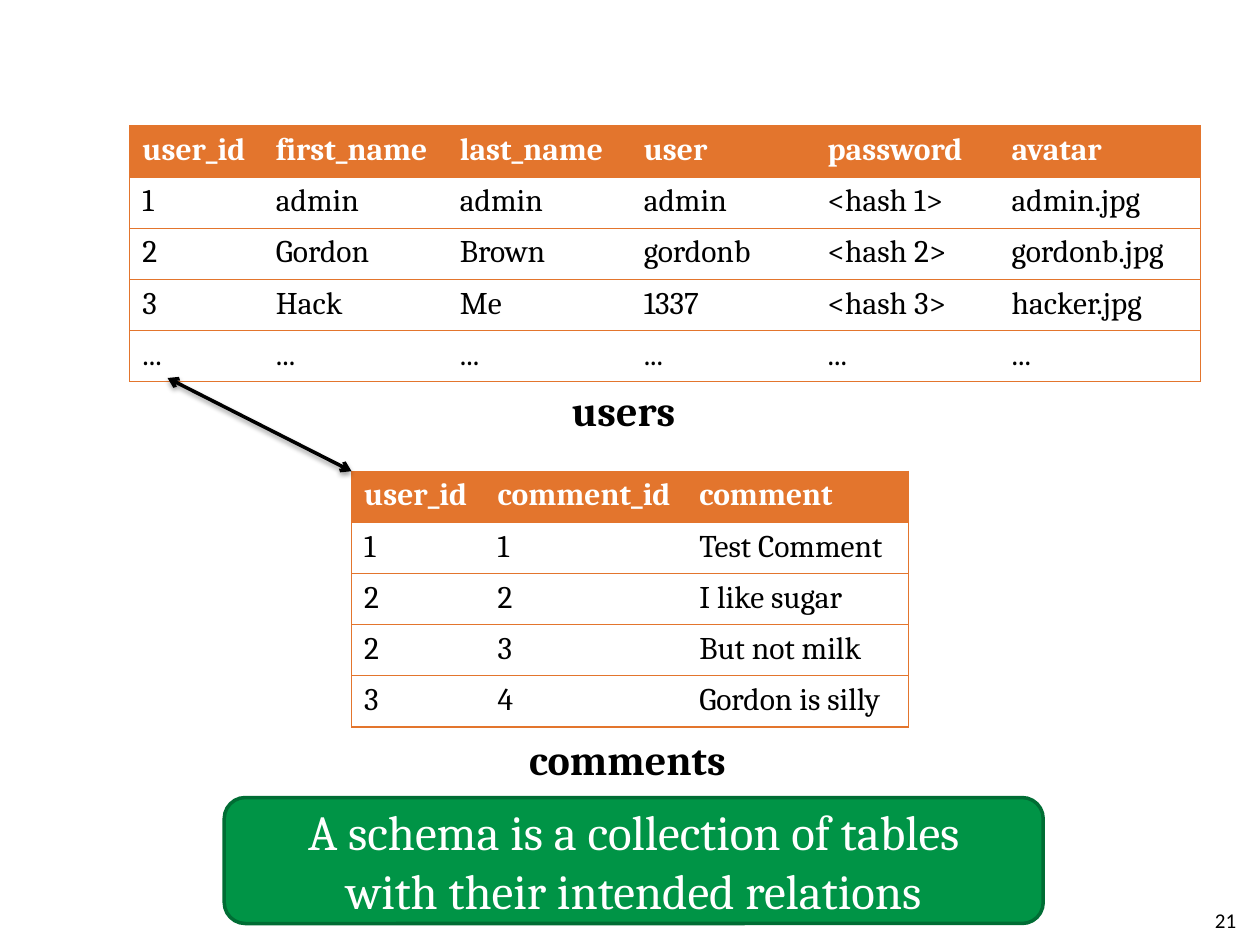
from lxml.etree import SubElement
from pptx import Presentation
from pptx.dml.color import RGBColor
from pptx.enum.shapes import MSO_CONNECTOR, MSO_SHAPE
from pptx.enum.text import MSO_ANCHOR, MSO_AUTO_SIZE, PP_ALIGN
from pptx.oxml import parse_xml
from pptx.oxml.ns import nsdecls, qn
from pptx.util import Inches, Pt

ORANGE = RGBColor(0xE3, 0x75, 0x2D)
GREEN = RGBColor(0x00, 0x94, 0x46)
DARK_GREEN = RGBColor(0x00, 0x6D, 0x34)
BLACK = RGBColor(0x00, 0x00, 0x00)
WHITE = RGBColor(0xFF, 0xFF, 0xFF)

TABLE_HEIGHT = 2.03
USERS = [
    ["user_id", "first_name", "last_name", "user", "password", "avatar"],
    ["1", "admin", "admin", "admin", "<hash 1>", "admin.jpg"],
    ["2", "Gordon", "Brown", "gordonb", "<hash 2>", "gordonb.jpg"],
    ["3", "Hack", "Me", "1337", "<hash 3>", "hacker.jpg"],
    ["..."] * 6,
]
COMMENTS = [
    ["user_id", "comment_id", "comment"],
    ["1", "1", "Test Comment"],
    ["2", "2", "I like sugar"],
    ["2", "3", "But not milk"],
    ["3", "4", "Gordon is silly"],
]


def style(paragraph, size, color, bold=False, name="Cambria"):
    font = paragraph.font
    font.name, font.size, font.bold = name, Pt(size), bold
    font.color.rgb = color


def set_borders(cell, visible_sides):
    """Draw orange borders on the given sides (L, R, T, B) and none elsewhere."""
    properties = cell._tc.get_or_add_tcPr()
    for side in "LRTB":
        border = SubElement(properties, qn(f"a:ln{side}"), w=str(Pt(0.75)))
        if side in visible_sides:
            fill = SubElement(border, qn("a:solidFill"))
            SubElement(fill, qn("a:srgbClr"), val=str(ORANGE))
        else:
            SubElement(border, qn("a:noFill"))


def add_data_table(slide, left, top, column_widths, rows):
    frame = slide.shapes.add_table(
        len(rows), len(column_widths), Inches(left), Inches(top),
        Inches(sum(column_widths)), Inches(TABLE_HEIGHT))
    table = frame.table
    table.horz_banding = False
    for column, width in zip(table.columns, column_widths):
        column.width = Inches(width)
    last = len(column_widths) - 1
    for r, row in enumerate(rows):
        for c, value in enumerate(row):
            cell = table.cell(r, c)
            cell.text = value
            is_header = r == 0
            style(cell.text_frame.paragraphs[0], 18,
                  WHITE if is_header else BLACK, bold=is_header)
            set_borders(cell, "TB" + "L" * (c == 0) + "R" * (c == last))
            if is_header:
                cell.fill.solid()
                cell.fill.fore_color.rgb = ORANGE
            else:
                cell.fill.background()


def add_table_name(slide, left, top, width, name):
    box = slide.shapes.add_textbox(
        Inches(left), Inches(top), Inches(width), Inches(0.5))
    frame = box.text_frame
    frame.word_wrap = False
    frame.auto_size = MSO_AUTO_SIZE.SHAPE_TO_FIT_TEXT
    frame.text = name
    style(frame.paragraphs[0], 24, BLACK, bold=True)


def add_callout(slide, message):
    callout = slide.shapes.add_shape(
        MSO_SHAPE.ROUNDED_RECTANGLE,
        Inches(1.78), Inches(6.33), Inches(6.5), Inches(1))
    callout.shadow.inherit = False
    callout.fill.solid()
    callout.fill.fore_color.rgb = GREEN
    callout.line.color.rgb = DARK_GREEN
    callout.line.width = Pt(2)
    frame = callout.text_frame
    frame.word_wrap = True
    frame.vertical_anchor = MSO_ANCHOR.MIDDLE
    paragraph = frame.paragraphs[0]
    paragraph.text = message
    paragraph.alignment = PP_ALIGN.CENTER
    style(paragraph, 28, WHITE)


def add_relation(slide, start, end):
    """Join two key columns with a shadowed, double-headed arrow."""
    relation = slide.shapes.add_connector(
        MSO_CONNECTOR.STRAIGHT, *map(Inches, start + end))
    relation.line.color.rgb = BLACK
    relation.line.width = Pt(2)
    line = relation.line._get_or_add_ln()
    for tag in ("a:headEnd", "a:tailEnd"):
        SubElement(line, qn(tag), type="arrow")
    relation._element.spPr.append(parse_xml(
        f'<a:effectLst {nsdecls("a")}>'
        f'<a:outerShdw blurRad="{Pt(3.1)}" dist="{Pt(1.6)}" dir="5400000" '
        'rotWithShape="0"><a:srgbClr val="000000"><a:alpha val="38000"/>'
        '</a:srgbClr></a:outerShdw></a:effectLst>'))


def add_slide_number(slide, number):
    box = slide.shapes.add_textbox(
        Inches(7.58), Inches(7.1), Inches(2.33), Inches(0.4))
    frame = box.text_frame
    frame.word_wrap = True
    frame.vertical_anchor = MSO_ANCHOR.MIDDLE
    paragraph = frame.paragraphs[0]
    paragraph.text = number
    paragraph.alignment = PP_ALIGN.RIGHT
    style(paragraph, 12, BLACK, name="Calibri")


def main():
    presentation = Presentation()
    presentation.slide_width = Inches(10)
    presentation.slide_height = Inches(7.5)
    slide = presentation.slides.add_slide(presentation.slide_layouts[6])

    add_slide_number(slide, "21")
    add_callout(slide, "A schema is a collection of tables\n"
                       "with their intended relations")
    add_data_table(slide, 1.03, 1, [1.06] + [1.46] * 4 + [1.6], USERS)
    add_table_name(slide, 4.44, 3, 1.05, "users")
    add_data_table(slide, 2.79, 3.74, [1.06, 1.6, 1.76], COMMENTS)
    add_table_name(slide, 4.1, 5.77, 1.81, "comments")
    add_relation(slide, (1.33, 3), (2.79, 3.74))

    presentation.save("out.pptx")


if __name__ == "__main__":
    main()
